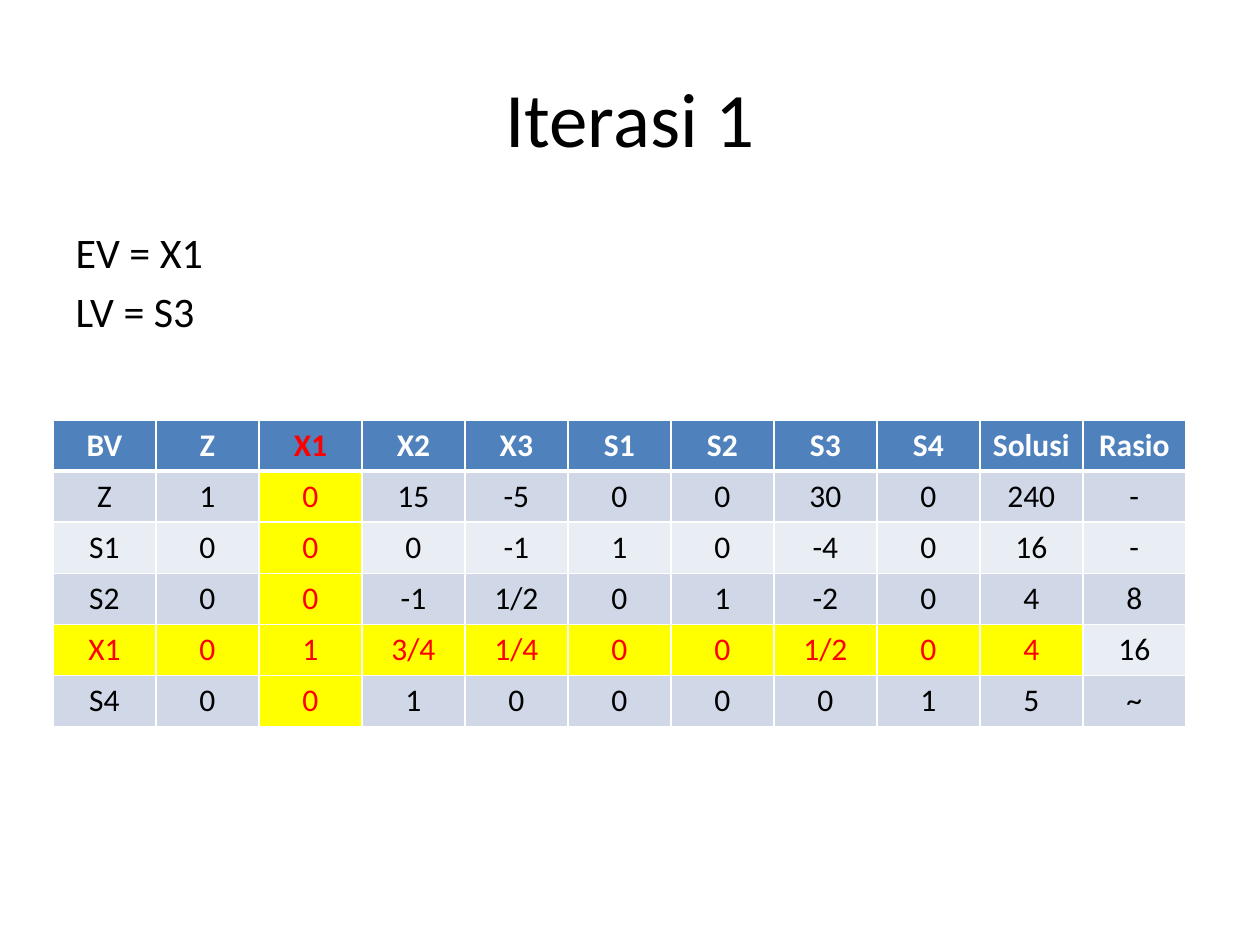
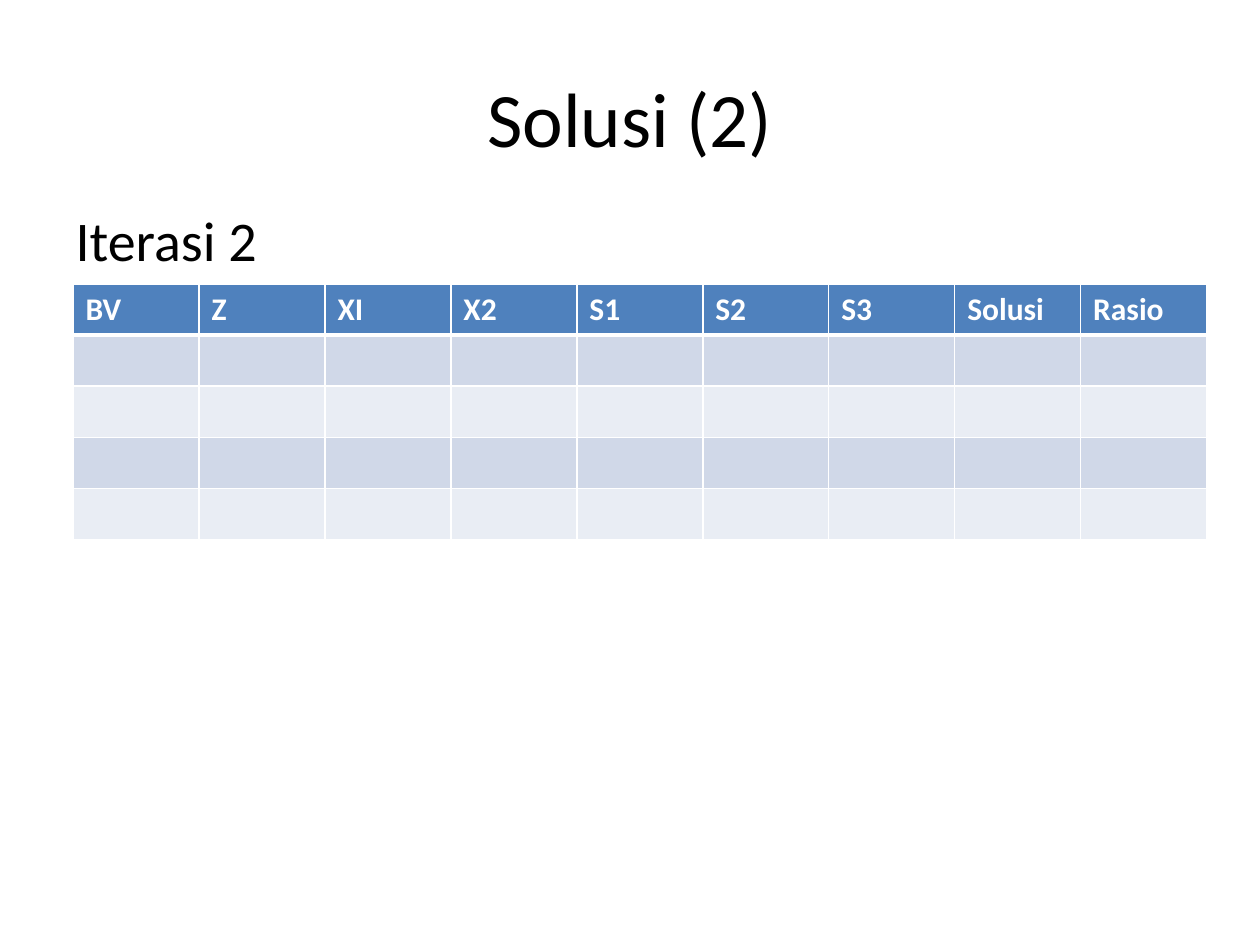
import pptx
import pptx.dml.color
import pptx.enum.text
import pptx.oxml
import pptx.oxml.ns
import pptx.util

PX = 914400 // 126
FONT = "Calibri"
BLACK, WHITE, RED, YELLOW = "000000", "FFFFFF", "FF0000", "FFFF00"
HEADER_FILL = "4F81BD"
BAND_FILLS = ["E9EDF4", "D0D8E8"]
ROW_HEIGHT = 51
CENTER = pptx.enum.text.PP_ALIGN.CENTER
LEFT = pptx.enum.text.PP_ALIGN.LEFT


def color(hex_string):
    return pptx.dml.color.RGBColor.from_string(hex_string)


def write_text(text_frame, text, size=18, fill=BLACK, bold=False, align=LEFT, hanging=0):
    text_frame.text = text
    for paragraph in text_frame.paragraphs:
        paragraph.alignment = align
        if hanging:
            properties = paragraph._p.get_or_add_pPr()
            properties.set("marL", str(hanging * PX))
            properties.set("indent", str(-hanging * PX))
            properties.append(pptx.oxml.parse_xml(f"<a:buNone {pptx.oxml.ns.nsdecls('a')}/>"))
        for run in paragraph.runs:
            run.font.name = FONT
            run.font.size = pptx.util.Pt(size)
            run.font.bold = bold
            run.font.color.rgb = color(fill)


slides = [
    {
        "title": "Iterasi 1",
        "body": "EV = X1\nLV = S3",
        "body_top": 220,
        "body_size": 24,
        "table_left": 53,
        "table_top": 420,
        "column_width": 103,
        "align": CENTER,
        "pivot_row": 4,
        "pivot_column": 2,
        "rows": [
            ["BV", "Z", "X1", "X2", "X3", "S1", "S2", "S3", "S4", "Solusi", "Rasio"],
            ["Z", "1", "0", "15", "-5", "0", "0", "30", "0", "240", "-"],
            ["S1", "0", "0", "0", "-1", "1", "0", "-4", "0", "16", "-"],
            ["S2", "0", "0", "-1", "1/2", "0", "1", "-2", "0", "4", "8"],
            ["X1", "0", "1", "3/4", "1/4", "0", "0", "1/2", "0", "4", "16"],
            ["S4", "0", "0", "1", "0", "0", "0", "0", "1", "5", "~"],
        ],
    },
    {
        "title": "Solusi (2)",
        "body": "Iterasi 2",
        "body_top": 199,
        "body_size": 32,
        "table_left": 73,
        "table_top": 284,
        "column_width": 126,
        "align": LEFT,
        "pivot_row": None,
        "pivot_column": None,
        "rows": [["BV", "Z", "XI", "X2", "S1", "S2", "S3", "Solusi", "Rasio"]] + [[""] * 9] * 4,
    },
]

presentation = pptx.Presentation()
presentation.slide_width = 1260 * PX
presentation.slide_height = 945 * PX

for content in slides:
    slide = presentation.slides.add_slide(presentation.slide_layouts[1])
    title, body = slide.placeholders
    title.left, title.top, title.width, title.height = 63 * PX, 38 * PX, 1134 * PX, 158 * PX
    write_text(title.text_frame, content["title"], size=44, align=CENTER)
    body.left, body.top, body.width, body.height = 63 * PX, content["body_top"] * PX, 1134 * PX, 624 * PX
    write_text(body.text_frame, content["body"], size=content["body_size"], hanging=48)

    rows = content["rows"]
    column_count = len(rows[0])
    table = slide.shapes.add_table(
        len(rows), column_count,
        content["table_left"] * PX, content["table_top"] * PX,
        column_count * content["column_width"] * PX, len(rows) * ROW_HEIGHT * PX,
    ).table
    for column in table.columns:
        column.width = content["column_width"] * PX

    for row_index, row in enumerate(rows):
        table.rows[row_index].height = ROW_HEIGHT * PX
        is_header = row_index == 0
        for column_index, value in enumerate(row):
            in_pivot_column = column_index == content["pivot_column"]
            in_pivot_row = row_index == content["pivot_row"] and column_index < column_count - 1
            is_pivot = in_pivot_column or in_pivot_row
            if is_header:
                cell_fill = HEADER_FILL
            else:
                cell_fill = YELLOW if is_pivot else BAND_FILLS[row_index % 2]
            text_fill = RED if is_pivot else WHITE if is_header else BLACK

            cell = table.cell(row_index, column_index)
            cell.fill.solid()
            cell.fill.fore_color.rgb = color(cell_fill)
            write_text(cell.text_frame, value, fill=text_fill, bold=is_header, align=content["align"])

            border_widths = {"L": 1, "R": 1, "T": 3 if row_index == 1 else 1, "B": 3 if is_header else 1}
            for position, (side, width) in enumerate(border_widths.items()):
                border = pptx.oxml.parse_xml(
                    f'<a:ln{side} {pptx.oxml.ns.nsdecls("a")} w="{pptx.util.Pt(width)}">'
                    f'<a:solidFill><a:srgbClr val="{WHITE}"/></a:solidFill></a:ln{side}>'
                )
                cell._tc.get_or_add_tcPr().insert(position, border)

presentation.save("out.pptx")
